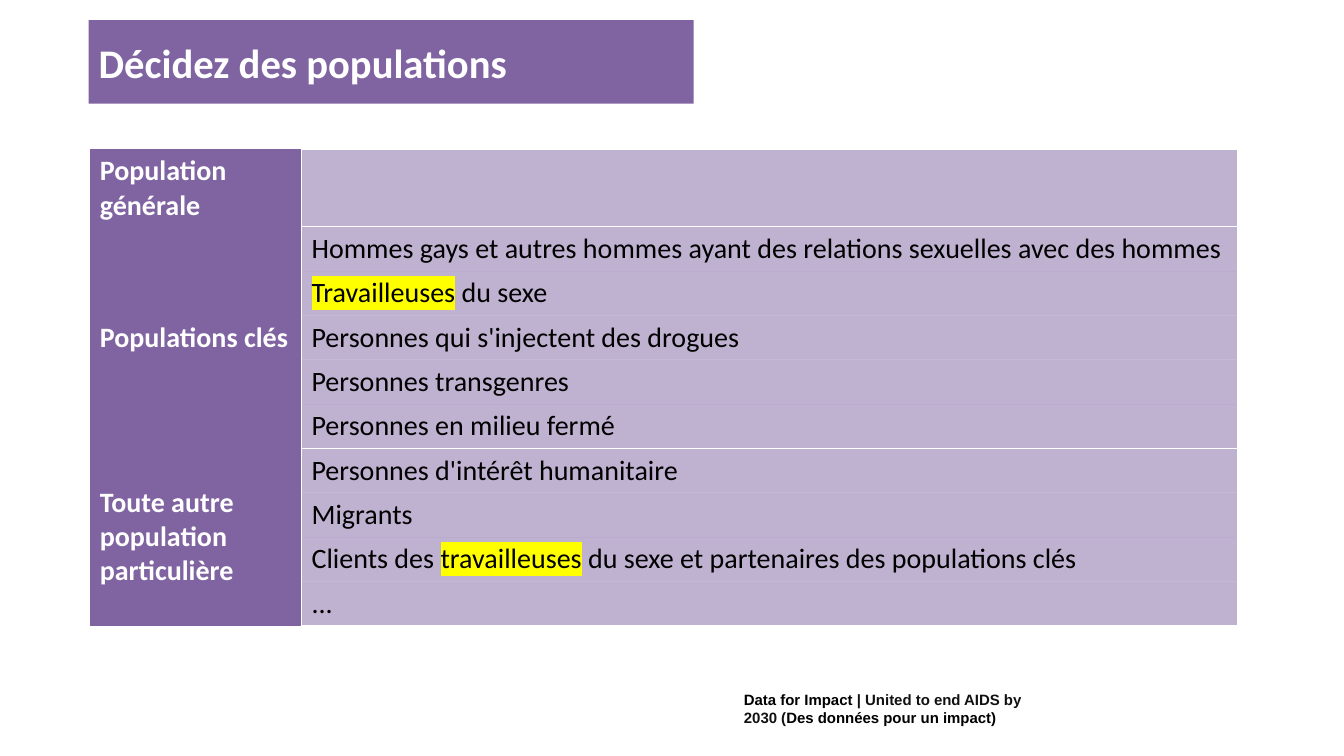
"""Build the slide that lists the populations to decide on."""
from lxml.etree import SubElement
from pptx import Presentation
from pptx.dml.color import RGBColor
from pptx.enum.shapes import MSO_SHAPE
from pptx.enum.text import MSO_ANCHOR
from pptx.oxml import parse_xml
from pptx.oxml.ns import nsdecls, qn
from pptx.util import Inches, Pt

TITLE = "Décidez des populations"
GROUPS = [
    ("Population générale", [[]]),
    ("Populations clés", [
        ["Hommes gays et autres hommes ayant des relations sexuelles avec des hommes"],
        [("Travailleuses", "mark"), " du sexe"],
        ["Personnes qui s'injectent des drogues"],
        ["Personnes transgenres"],
        ["Personnes en milieu fermé"],
    ]),
    ("Toute autre population particulière", [
        ["Personnes d'intérêt humanitaire"],
        ["Migrants"],
        ["Clients des ", ("travailleuses", "mark"),
         " du sexe et partenaires des populations clés"],
        ["..."],
    ]),
]
FOOTER = [
    "Data for Impact ",
    ("| United to end AIDS by 2030 (", "soft"),
    "Des données pour un impact)",
]

THEME = {
    "purple": "8064A2", "white": "FFFFFF", "mark": "FFFF00", "tint": 50000,
    "title": {"name": "Calibri", "size": Pt(29), "bold": True, "color": "FFFFFF"},
    "head": {"name": "Calibri", "size": Pt(20), "bold": True, "color": "FFFFFF"},
    "item": {"name": "Calibri", "size": Pt(20), "bold": False, "color": "000000"},
    "footer": {"name": "Arial", "size": Pt(10.7), "bold": True, "color": "000000"},
    "soft": "111111",
}
COLS = [2.1, 9.28]
FIRST_ROW, ROW = 0.77, 0.44


def style_font(font, style):
    for key, value in style.items():
        if key == "color":
            font.color.rgb = RGBColor.from_string(value)
        else:
            setattr(font, key, value)


def write(tf, runs, style):
    p = tf.paragraphs[0]
    if not runs:
        style_font(p.font, style)
    for run in runs:
        text, accent = run if isinstance(run, tuple) else (run, None)
        r = p.add_run()
        r.text = text
        style_font(r.font, style)
        if accent == "soft":
            r.font.color.rgb = RGBColor.from_string(THEME["soft"])
        elif accent == "mark":
            fill = r.font._element.find(qn("a:solidFill"))
            fill.addnext(parse_xml(
                f'<a:highlight {nsdecls("a")}><a:srgbClr val="{THEME["mark"]}"/></a:highlight>'))


def paint(cell, sides, tint=None):
    cell.fill.solid()
    cell.fill.fore_color.rgb = RGBColor.from_string(THEME["purple"])
    tc_pr = cell._tc.get_or_add_tcPr()
    if tint:
        color = tc_pr.find(f'{qn("a:solidFill")}/{qn("a:srgbClr")}')
        SubElement(color, qn("a:alpha"), val=str(tint))
    for i, side in enumerate("LRTB"):
        line = (f'<a:solidFill><a:srgbClr val="{THEME["white"]}"/></a:solidFill>'
                if side in sides else "<a:noFill/>")
        tc_pr.insert(i, parse_xml(
            f'<a:ln{side} {nsdecls("a")} w="{Pt(1)}">{line}</a:ln{side}>'))


def add_title(s):
    sp = s.shapes.add_shape(MSO_SHAPE.RECTANGLE, Inches(0.88), Inches(0.2),
                            Inches(6), Inches(0.83))
    sp.shadow.inherit = False
    sp.fill.solid()
    sp.fill.fore_color.rgb = RGBColor.from_string(THEME["purple"])
    sp.line.fill.background()
    tf = sp.text_frame
    tf.word_wrap = True
    tf.vertical_anchor = MSO_ANCHOR.MIDDLE
    tf.paragraphs[0].alignment = 1
    write(tf, [TITLE], THEME["title"])


def add_populations(s):
    count = sum(len(items) for _, items in GROUPS)
    heights = [FIRST_ROW] + [ROW] * (count - 1)
    table = s.shapes.add_table(count, len(COLS), Inches(0.89), Inches(1.48),
                               Inches(sum(COLS)), Inches(sum(heights))).table
    table.first_row = table.horz_banding = False
    for col, width in zip(table.columns, COLS):
        col.width = Inches(width)
    for row, height in zip(table.rows, heights):
        row.height = Inches(height)
    top = 0
    for name, items in GROUPS:
        last = top + len(items) - 1
        head = table.cell(top, 0)
        if last > top:
            head.merge(table.cell(last, 0))
        head.vertical_anchor = MSO_ANCHOR.MIDDLE
        write(head.text_frame, [name], THEME["head"])
        for i, runs in enumerate(items, top):
            paint(table.cell(i, 0), "LR")
            sides = "LR" + ("T" if i == top else "") + ("B" if i == last else "")
            cell = table.cell(i, 1)
            paint(cell, sides, THEME["tint"])
            write(cell.text_frame, runs, THEME["item"])
        top = last + 1


def add_footer(s):
    tf = s.shapes.add_textbox(Inches(7.28), Inches(6.8),
                              Inches(3.06), Inches(0.45)).text_frame
    tf.word_wrap = True
    write(tf, FOOTER, THEME["footer"])


def main():
    prs = Presentation()
    prs.slide_width, prs.slide_height = Inches(13.33), Inches(7.5)
    s = prs.slides.add_slide(prs.slide_layouts[6])
    add_footer(s)
    add_title(s)
    add_populations(s)
    prs.save("out.pptx")


if __name__ == "__main__":
    main()
